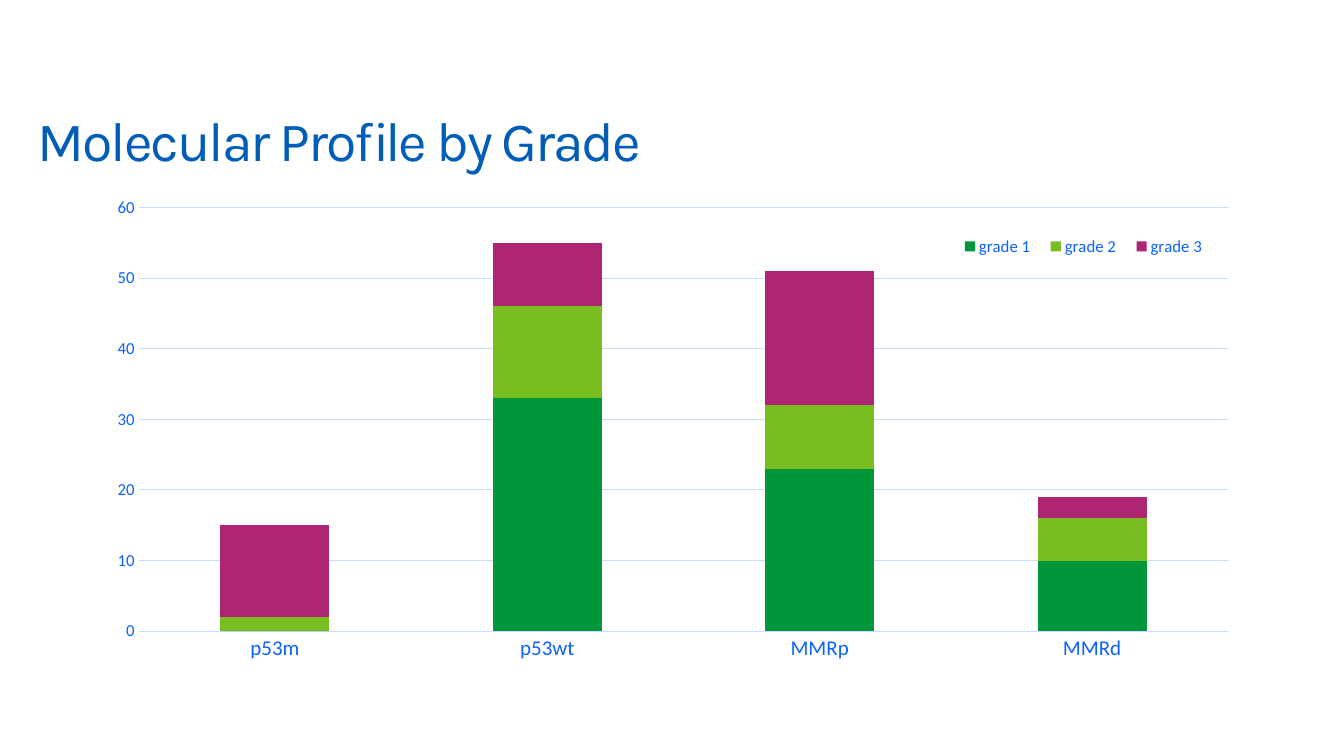
from dataclasses import dataclass
from typing import NamedTuple

from lxml import etree
from pptx import Presentation
from pptx.chart.data import CategoryChartData
from pptx.dml.color import RGBColor
from pptx.enum.chart import XL_CHART_TYPE, XL_LEGEND_POSITION, XL_TICK_MARK
from pptx.enum.text import MSO_ANCHOR
from pptx.oxml.ns import qn
from pptx.util import Emu, Pt

STACKED = XL_CHART_TYPE.COLUMN_STACKED
BOTTOM = XL_LEGEND_POSITION.BOTTOM
NO_TICK = XL_TICK_MARK.NONE
MIDDLE = MSO_ANCHOR.MIDDLE
SCALE = 9525


@dataclass(frozen=True)
class Theme:
    head: str = "005EB8"
    label: str = "0B62FF"
    grid: str = "C7DBFF"
    base: str = "003087"
    head_font: str = "Karla"
    body_font: str = "Calibri"
    head_size: float = 39.6
    cat_size: int = 15
    label_size: int = 12
    base_size: int = 10
    line: float = 0.75


class Box(NamedTuple):
    x: int
    y: int
    w: int
    h: int


class Part(NamedTuple):
    """Place inside the chart, as shares of its width and height."""
    x: float
    y: float
    w: float
    h: float


class Grade(NamedTuple):
    name: str
    counts: tuple[int, ...]
    color: str


THEME = Theme()
PAGE = Box(0, 0, 1280, 720)
TITLE = Box(36, 111, 1035, 51)
CHART = Box(88, 178, 1104, 492)
PLOT = Part(0.04, 0.04, 0.94, 0.82)
KEY = Part(0.74, 0.08, 0.23, 0.07)
GROUPS = ("p53m", "p53wt", "MMRp", "MMRd")
GRADES = (
    Grade("grade 1", (0, 33, 23, 10), "009639"),
    Grade("grade 2", (2, 13, 9, 6), "78BE20"),
    Grade("grade 3", (13, 9, 19, 3), "AE2573"),
)


def px(box: Box) -> list[Emu]:
    return [Emu(n * SCALE) for n in box]


def style(font, name: str, size: float, color: str) -> None:
    font.name = name
    font.size = Pt(size)
    font.color.rgb = RGBColor.from_string(color)


def rule(line) -> None:
    line.color.rgb = RGBColor.from_string(THEME.grid)
    line.width = Pt(THEME.line)


def place(node, part: Part, index: int, inner: bool = False) -> None:
    """Give a chart part a fixed layout, as its child number index."""
    for old in node.findall(qn("c:layout")):
        node.remove(old)
    layout = etree.Element(qn("c:layout"))
    node.insert(index, layout)
    manual = etree.SubElement(layout, qn("c:manualLayout"))
    pairs = [("layoutTarget", "inner")] if inner else []
    pairs += [("xMode", "edge"), ("yMode", "edge")]
    pairs += [(key, str(value)) for key, value in part._asdict().items()]
    for tag, value in pairs:
        etree.SubElement(manual, qn(f"c:{tag}")).set("val", value)


def add_title(slide, text: str) -> None:
    frame = slide.shapes.add_textbox(*px(TITLE)).text_frame
    frame.margin_left = frame.margin_right = 0
    frame.margin_top = frame.margin_bottom = 0
    frame.word_wrap = True
    frame.vertical_anchor = MIDDLE
    frame.text = text
    line = frame.paragraphs[0]
    line.line_spacing = 0.9
    run = line.runs[0]
    style(run.font, THEME.head_font, THEME.head_size, THEME.head)
    run.font._element.set("spc", "-150")


def set_axes(chart) -> None:
    cat, val = chart.category_axis, chart.value_axis
    for axis, size in ((cat, THEME.cat_size), (val, THEME.label_size)):
        axis.major_tick_mark = axis.minor_tick_mark = NO_TICK
        style(axis.tick_labels.font, THEME.body_font, size, THEME.label)
    rule(cat.format.line)
    val.format.line.fill.background()
    val.minimum_scale, val.maximum_scale, val.major_unit = 0, 60, 10
    val.has_major_gridlines = True
    rule(val.major_gridlines.format.line)


def add_chart(slide) -> None:
    data = CategoryChartData()
    data.categories = GROUPS
    for grade in GRADES:
        data.add_series(grade.name, grade.counts)
    chart = slide.shapes.add_chart(STACKED, *px(CHART), data).chart
    chart.has_title = False
    style(chart.font, THEME.body_font, THEME.base_size, THEME.base)
    set_axes(chart)

    plot = chart.plots[0]
    plot.gap_width, plot.overlap = 150, 100
    plot.vary_by_categories = False
    for series, grade in zip(plot.series, GRADES):
        series.format.fill.solid()
        series.format.fill.fore_color.rgb = RGBColor.from_string(grade.color)

    chart.has_legend = True
    legend = chart.legend
    legend.position = BOTTOM
    legend.include_in_layout = False
    style(legend.font, THEME.body_font, THEME.label_size, THEME.label)
    place(legend._element, KEY, 1)
    place(chart._chartSpace.find(f".//{qn('c:plotArea')}"), PLOT, 0, True)


def main() -> None:
    deck = Presentation()
    deck.slide_width, deck.slide_height = px(PAGE)[2:]
    slide = deck.slides.add_slide(deck.slide_layouts[6])
    add_title(slide, "Molecular Profile by Grade")
    add_chart(slide)
    deck.save("out.pptx")


if __name__ == "__main__":
    main()
